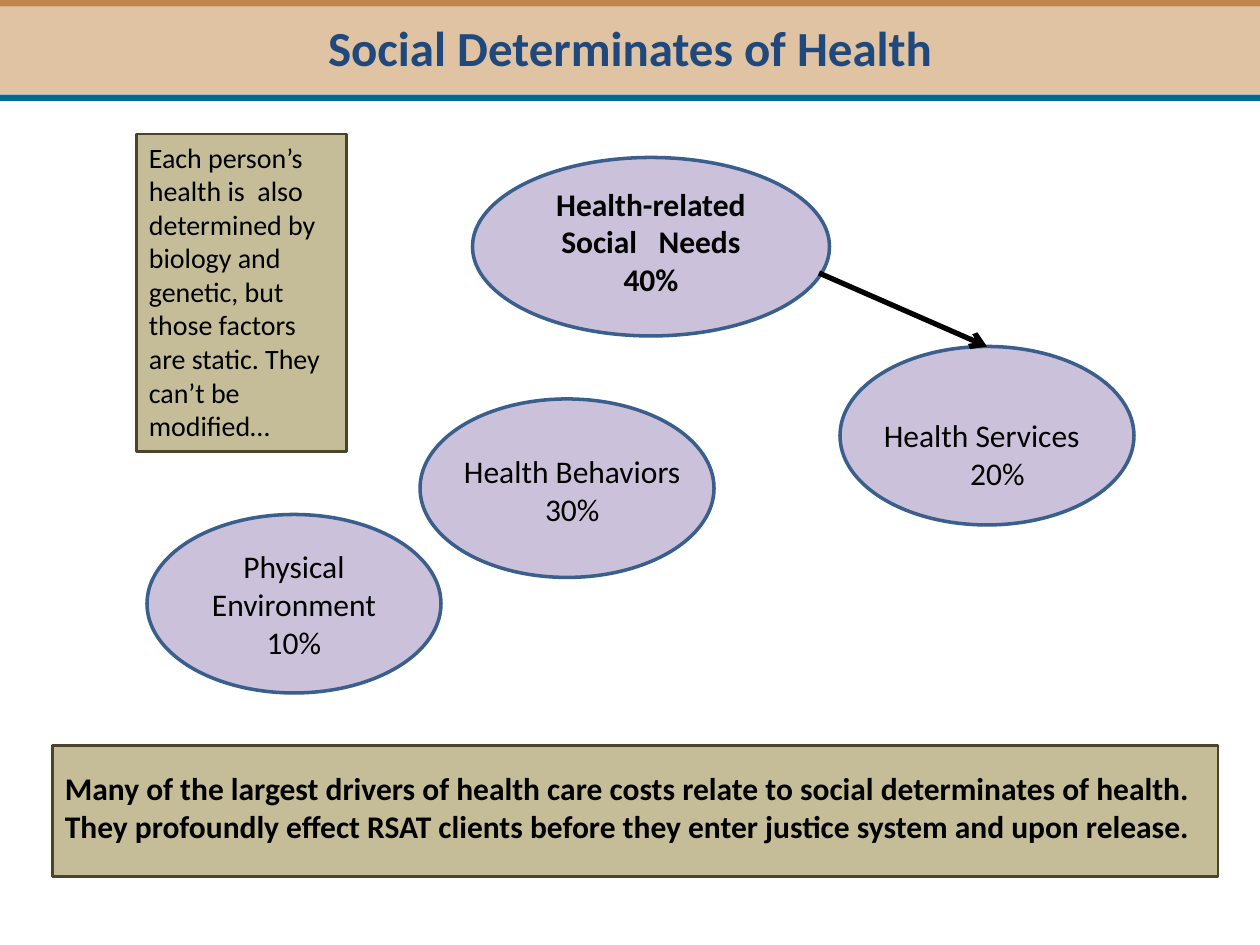
from dataclasses import dataclass
from typing import Any

from lxml import etree
from pptx import Presentation
from pptx.dml.color import RGBColor
from pptx.enum import shapes, text
from pptx.oxml.ns import qn
from pptx.util import Pt

COLORS = {
    "lavender": "CCC1DA", "outline": "3A5F8C", "khaki": "C4BD97",
    "olive": "4A452A", "sand": "E0C3A3", "teal": "006892",
    "bronze": "BE854C", "navy": "1F497D", "black": "000000",
}
LEFT, CENTER = text.PP_ALIGN.LEFT, text.PP_ALIGN.CENTER
TOP, MIDDLE = text.MSO_ANCHOR.TOP, text.MSO_ANCHOR.MIDDLE
OVAL, BOX = shapes.MSO_SHAPE.OVAL, shapes.MSO_SHAPE.RECTANGLE
FACTOR_SIZE = (168, 102)


def color(name):
    return RGBColor.from_string(COLORS[name])


@dataclass
class Board:
    slide: Any
    font: str = "Calibri"
    size: int = 18

    def fill_text(self, owner, lines, aligns, anchor=TOP, ink="black", **font):
        frame = owner.text_frame
        frame.word_wrap = True
        frame.vertical_anchor = anchor
        for index, (line, align) in enumerate(zip(lines, aligns)):
            paragraph = frame.add_paragraph() if index else frame.paragraphs[0]
            paragraph.alignment = align
            run = paragraph.add_run()
            run.text = line
            style = {"name": self.font, "size": Pt(self.size), "bold": False, **font}
            for key, value in style.items():
                setattr(run.font, key, value)
            run.font.color.rgb = color(ink)

    def shape(self, kind, bounds, fill, line=None, width=0):
        item = self.slide.shapes.add_shape(kind, *map(Pt, bounds))
        item.shadow.inherit = False
        item.fill.solid()
        item.fill.fore_color.rgb = color(fill)
        if line:
            item.line.color.rgb = color(line)
            item.line.width = Pt(width)
        else:
            item.line.fill.background()
        return item

    def ellipse(self, left, top, size=FACTOR_SIZE):
        return self.shape(OVAL, (left, top, *size), "lavender", "outline", 2)

    def note(self, bounds, line, inset=3.6, **font):
        item = self.shape(BOX, bounds, "khaki", "olive", 1.5)
        item.text_frame.margin_top = Pt(inset)
        self.fill_text(item, [line], [LEFT], **font)

    def label(self, bounds, lines, aligns, **font):
        self.fill_text(self.slide.shapes.add_textbox(*map(Pt, bounds)), lines, aligns, **font)

    def arrow(self, start, target, site):
        link = self.slide.shapes.add_connector(
            shapes.MSO_CONNECTOR.STRAIGHT, *map(Pt, start), *map(Pt, start))
        link.end_connect(target, site)
        link.line.color.rgb = color("black")
        link.line.width = Pt(3)
        properties = link._element.spPr
        etree.SubElement(properties.find(qn("a:ln")), qn("a:tailEnd"), type="arrow")
        etree.SubElement(properties, qn("a:effectLst"))


def main():
    deck = Presentation()
    deck.slide_width, deck.slide_height = Pt(720), Pt(540)
    board = Board(deck.slides.add_slide(deck.slide_layouts[6]))

    board.ellipse(240, 228)
    services = board.ellipse(480, 198)
    board.label((498, 234, 144, 51), ["Health Services", "20%"], [LEFT, CENTER])

    environment = board.ellipse(84, 294)
    board.fill_text(environment, ["Physical Environment", "10%"], [CENTER] * 2, MIDDLE)
    board.label((246, 255, 162, 51), ["Health Behaviors 30%"], [CENTER])

    board.ellipse(270, 90, (204, 102))
    board.label((300, 102, 144, 73), ["Health-related Social   Needs", "40%"],
                [CENTER] * 2, bold=True)

    board.note((30, 426, 666, 75),
               "Many of the largest drivers of health care costs relate to social "
               "determinates of health. They profoundly effect RSAT clients before "
               "they enter justice system and upon release.", inset=13.4, bold=True)
    board.arrow((468, 156), services, 0)
    board.note((78, 76.5, 120, 181.5),
               "Each person’s health is  also determined by biology and genetic, but "
               "those factors are static. They can’t be modified…", size=Pt(16))

    banner = board.shape(BOX, (0, 0, 720, 54), "sand")
    board.fill_text(banner, ["Social Determinates of Health"], [CENTER], MIDDLE, "navy",
                    size=Pt(28), bold=True)
    for top, fill in ((54, "teal"), (0, "bronze")):
        board.shape(BOX, (0, top, 720, 3.6), fill)

    deck.save("out.pptx")


if __name__ == "__main__":
    main()
